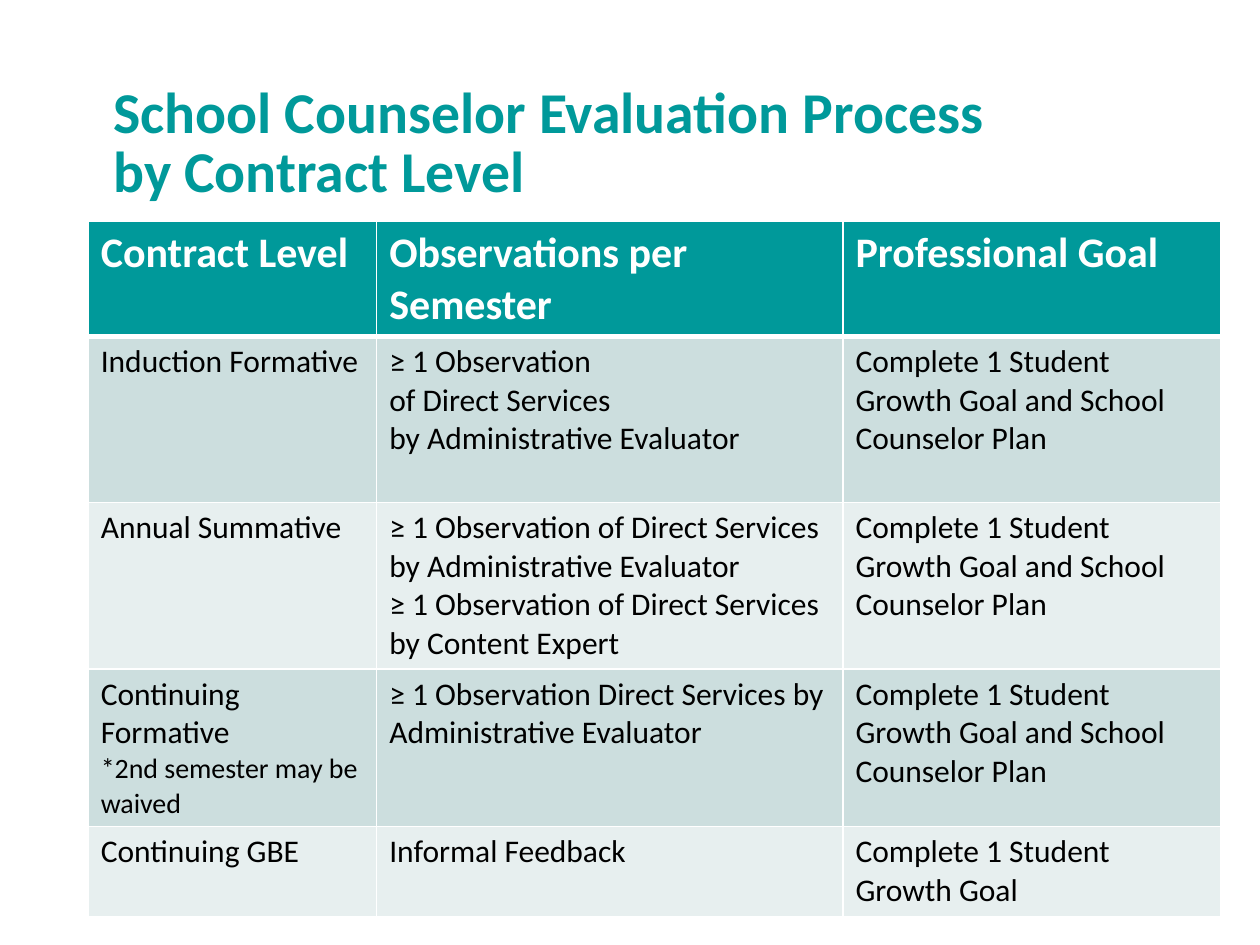
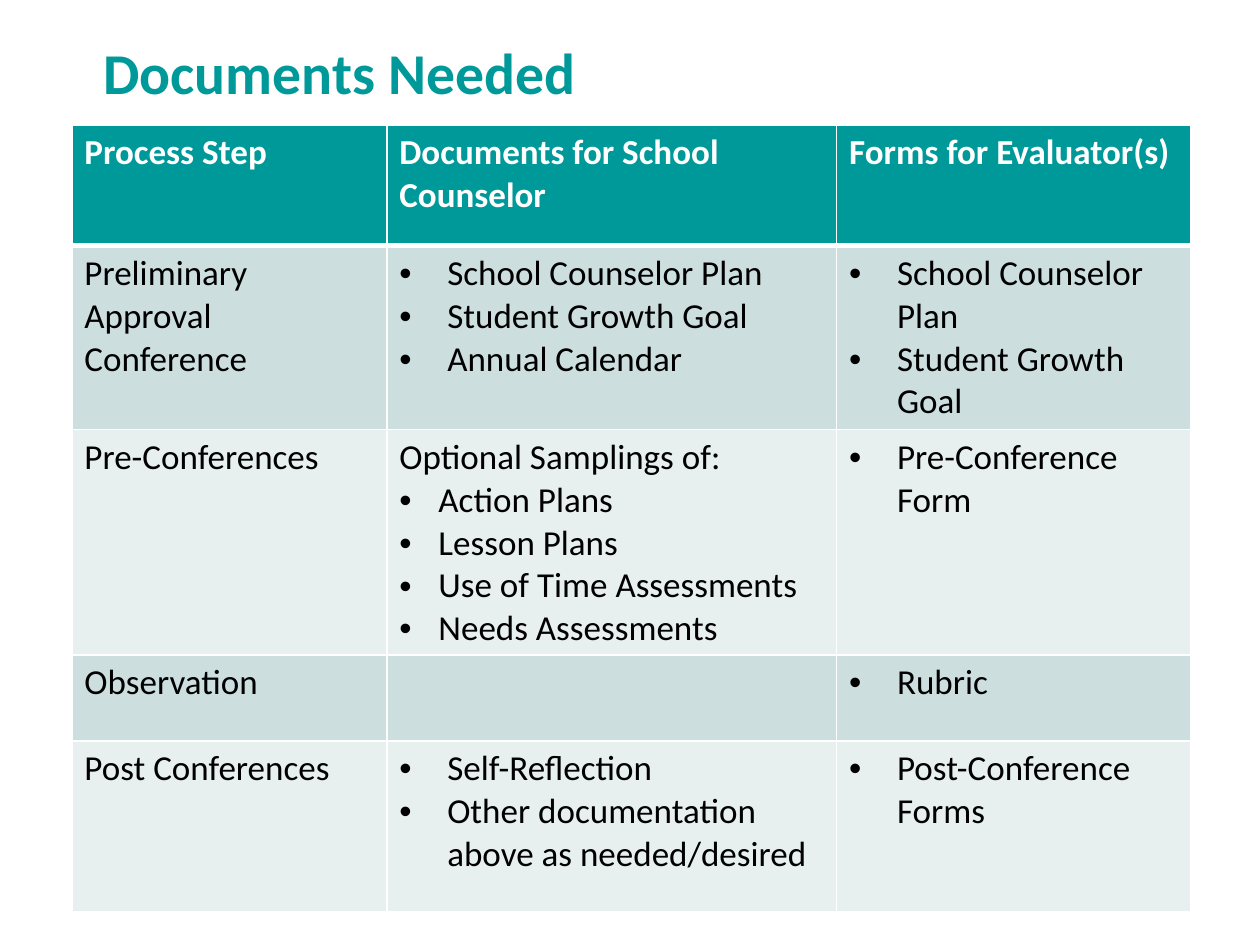
"""Build two slides on the evaluation of school counselors."""
from lxml import etree
from pptx import Presentation
from pptx import util as u
from pptx.dml import color
from pptx.enum import text
from pptx.oxml import ns

COLORS = {"teal": "00999A", "white": "FFFFFF", "black": "000000",
          "odd": "CCDEDE", "even": "E7EFEF"}
FONT = "Calibri"
BULLET = "• "
GOAL = "Complete 1 Student Growth Goal and School Counselor Plan"


class Deck:
    """Holds the shared style and the current slide."""

    def __init__(self):
        self.prs = Presentation()
        self.prs.slide_width, self.prs.slide_height = u.Inches(10), u.Inches(7.5)
        self.s = None

    def slide(self):
        self.s = self.prs.slides.add_slide(self.prs.slide_layouts[6])

    def paragraph(self, p, words, size, ink, bold=False):
        p.text = words
        for r in p.runs:
            style = {"name": FONT, "size": u.Pt(size), "bold": bold}
            for key, value in style.items():
                setattr(r.font, key, value)
            r.font.color.rgb = color.RGBColor.from_string(COLORS[ink])

    def title(self, words, left, top, height):
        sp = self.s.shapes.add_textbox(*map(u.Inches, (left, top, 8.2, height)))
        tf = sp.text_frame
        style = {"word_wrap": True, "vertical_anchor": text.MSO_ANCHOR.BOTTOM,
                 "margin_left": 0, "margin_right": 0,
                 "margin_top": 0, "margin_bottom": 0}
        for key, value in style.items():
            setattr(tf, key, value)
        p = tf.paragraphs[0]
        p.line_spacing = 0.85
        self.paragraph(p, words, 33, "teal", True)

    def bullet(self, p, indent):
        pPr = p._p.get_or_add_pPr()
        pPr.set("marL", str(u.Inches(indent)))
        pPr.set("indent", str(-u.Inches(indent)))
        for tag, key, value in (("a:buFont", "typeface", "Arial"),
                                ("a:buChar", "char", BULLET.strip())):
            etree.SubElement(pPr, ns.qn(tag)).set(key, value)

    def borders(self, cell, widths):
        tcPr = cell._tc.get_or_add_tcPr()
        for i, (side, width) in enumerate(zip("LRTB", widths)):
            ln = etree.Element(ns.qn("a:ln" + side), w=str(u.Pt(width)))
            fill = etree.SubElement(ln, ns.qn("a:solidFill"))
            etree.SubElement(fill, ns.qn("a:srgbClr"), val=COLORS["white"])
            tcPr.insert(i, ln)

    def cell(self, cell, lines, size, row):
        header = row == 0
        fill = "teal" if header else "odd" if row % 2 else "even"
        cell.fill.solid()
        cell.fill.fore_color.rgb = color.RGBColor.from_string(COLORS[fill])
        self.borders(cell, (1, 1, 3 if row == 1 else 1, 3 if header else 1))
        lines = [lines] if isinstance(lines, str) else lines
        indent = 0.38 if lines[0].startswith(BULLET) else 0.31
        tf = cell.text_frame
        for i, line in enumerate(lines):
            p = tf.add_paragraph() if i else tf.paragraphs[0]
            if line.startswith(BULLET):
                self.bullet(p, indent)
            self.paragraph(p, line.removeprefix(BULLET),
                           16 if line.startswith("*") else size,
                           "white" if header else "black", header)

    def table(self, left, top, widths, heights, rows, head_size, body_size):
        box = (left, top, sum(widths), sum(heights))
        table = self.s.shapes.add_table(len(rows), len(widths), *map(u.Inches, box)).table
        table.horz_banding = False
        for column, width in zip(table.columns, widths):
            column.width = u.Inches(width)
        for i, (height, row) in enumerate(zip(heights, rows)):
            table.rows[i].height = u.Inches(height)
            for j, lines in enumerate(row):
                self.cell(table.cell(i, j), lines, body_size if i else head_size, i)


CONTRACT_LEVELS = [
    ["Contract Level", "Observations per Semester", "Professional Goal"],
    ["Induction Formative",
     "≥ 1 Observation\nof Direct Services\nby Administrative Evaluator", GOAL],
    ["Annual Summative",
     ["≥ 1 Observation of Direct Services by Administrative Evaluator",
      "≥ 1 Observation of Direct Services by Content Expert"], GOAL],
    [["Continuing Formative", "*2nd semester may be waived"],
     "≥ 1 Observation Direct Services by Administrative Evaluator", GOAL],
    ["Continuing GBE", "Informal Feedback", "Complete 1 Student Growth Goal"],
]

DOCUMENTS = [
    ["Process Step", "Documents for School Counselor", "Forms for Evaluator(s)"],
    ["Preliminary Approval Conference",
     ["• School Counselor Plan", "• Student Growth Goal", "• Annual Calendar"],
     ["• School Counselor Plan", "• Student Growth Goal"]],
    ["Pre-Conferences",
     ["Optional Samplings of:", "• Action Plans", "• Lesson Plans",
      "• Use of Time Assessments", "• Needs Assessments"],
     "• Pre-Conference Form"],
    ["Observation", "", "• Rubric"],
    ["Post Conferences",
     ["• Self-Reflection", "• Other documentation above as needed/desired"],
     "• Post-Conference Forms"],
]


def main():
    deck = Deck()
    deck.slide()
    deck.title("School Counselor Evaluation Process\nby Contract Level", 0.9, 0.22, 1.4)
    deck.table(0.7, 1.76, (2.29, 3.7, 3), (0.91, 1.32, 1.32, 1.25, 0.72),
               CONTRACT_LEVELS, 24, 18)
    deck.slide()
    deck.title("Documents Needed", 0.82, -0.1, 0.94)
    deck.table(0.57, 0.99, (2.5, 3.57, 2.81), (0.96, 1.46, 1.79, 0.68, 1.36),
               DOCUMENTS, 20, 20)
    deck.prs.save("out.pptx")


if __name__ == "__main__":
    main()
